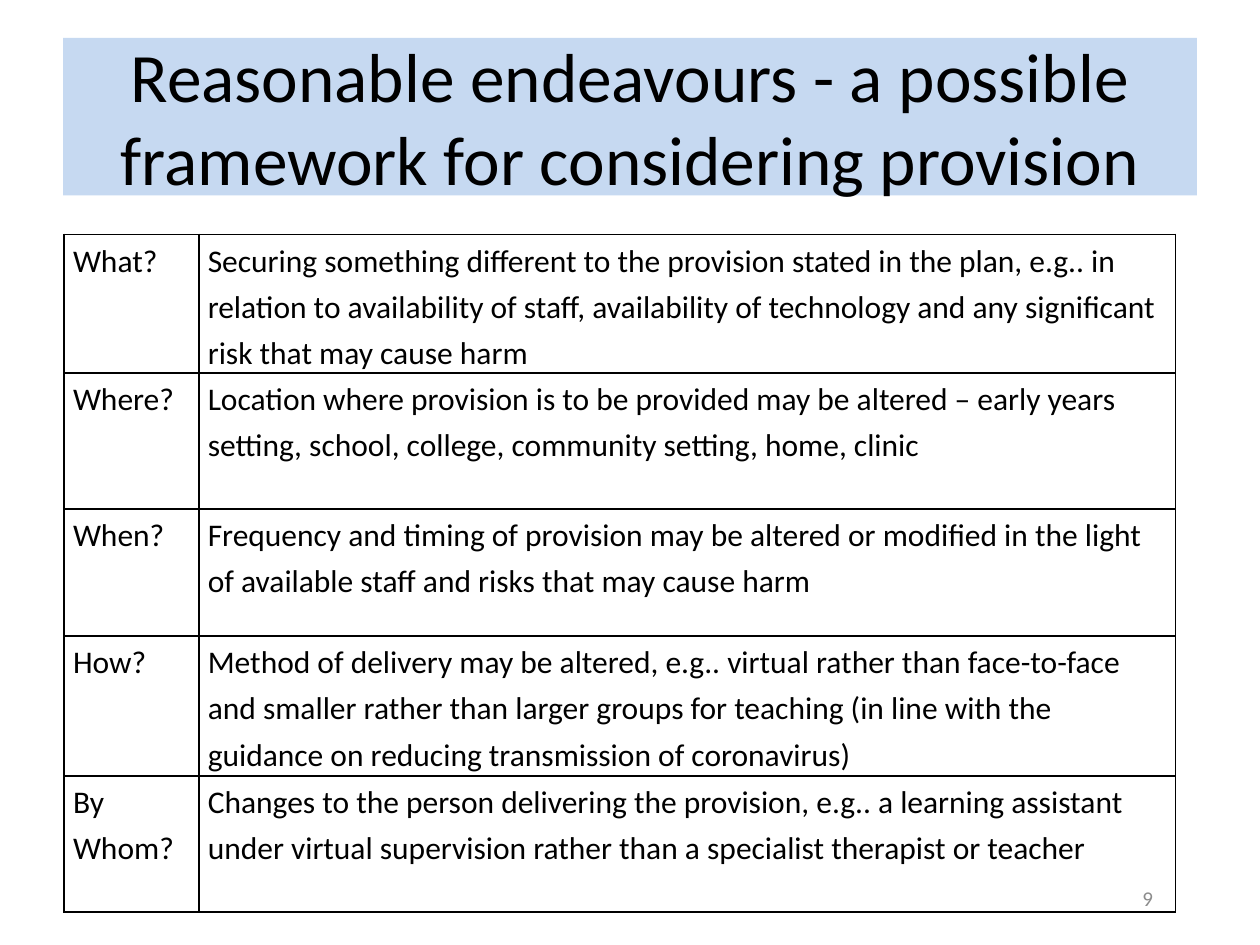
from lxml.etree import SubElement
from pptx import Presentation
from pptx.dml.color import RGBColor
from pptx.enum.text import MSO_ANCHOR as Anchor, MSO_AUTO_SIZE as AutoSize, PP_ALIGN as Align
from pptx.oxml.ns import qn
from pptx.util import Inches, Pt

COLOURS = {"text": "000000", "title": "C6D9F1", "cell": "FFFFFF", "border": "000000", "number": "8C8C8C"}
FONT = "Calibri"
TITLE = "Reasonable endeavours - a possible framework for considering provision"
COLUMN_WIDTHS = (1.07, 7.75)
FRAMEWORK = [
    (1.08, "What?", "Securing something different to the provision stated in the plan, e.g.. in relation to "
     "availability of staff, availability of technology and any significant risk that may cause harm"),
    (1.08, "Where?", "Location where provision is to be provided may be altered – early years setting, school, "
     "college, community setting, home, clinic"),
    (1.01, "When?", "Frequency and timing of provision may be altered or modified in the light of available "
     "staff and risks that may cause harm"),
    (1.11, "How?", "Method of delivery may be altered, e.g.. virtual rather than face-to-face and smaller rather "
     "than larger groups for teaching (in line with the guidance on reducing transmission of coronavirus)"),
    (1.08, "By Whom?", "Changes to the person delivering the provision, e.g.. a learning assistant under virtual "
     "supervision rather than a specialist therapist or teacher"),
]


def colour(name):
    """Return the named colour."""
    return RGBColor.from_string(COLOURS[name])


def paint(target, name):
    """Give a shape or cell a solid fill."""
    target.fill.solid()
    target.fill.fore_color.rgb = colour(name)


def write(frame, text, size=18, shade="text", align=Align.LEFT, spacing=None, after=None):
    """Write one formatted paragraph into a text frame."""
    para = frame.paragraphs[0]
    para.alignment, para.line_spacing = align, spacing
    para.space_after = None if after is None else Pt(after)
    span = para.add_run()
    span.text = text
    span.font.name, span.font.size = FONT, Pt(size)
    span.font.color.rgb = colour(shade)


def add_title(slide):
    """Place and format the title placeholder."""
    title = slide.shapes.title
    title.left, title.top, title.width, title.height = map(Inches, (0.5, 0.3, 9, 1.25))
    paint(title, "title")
    frame = title.text_frame
    frame.word_wrap, frame.auto_size = True, AutoSize.NONE
    frame.vertical_anchor = Anchor.MIDDLE
    write(frame, TITLE, size=39.6, align=Align.CENTER)


def outline(cell):
    """Draw a border on all four sides of a cell."""
    properties = cell._tc.get_or_add_tcPr()
    for side in ("lnL", "lnR", "lnT", "lnB"):
        line = SubElement(properties, qn(f"a:{side}"), w=str(Pt(1)))
        fill = SubElement(line, qn("a:solidFill"))
        SubElement(fill, qn("a:srgbClr"), val=COLOURS["border"])


def fill_cell(cell, text):
    """Format a cell and write its text."""
    outline(cell)
    paint(cell, "cell")
    cell.margin_left = cell.margin_right = Inches(0.07)
    cell.margin_top = cell.margin_bottom = 0
    write(cell.text_frame, text, spacing=1.2, after=12)


def add_framework(slide):
    """Add the table of questions and possible changes."""
    height = sum(row[0] for row in FRAMEWORK)
    table = slide.shapes.add_table(len(FRAMEWORK), len(COLUMN_WIDTHS), Inches(0.51), Inches(1.86),
                                   Inches(sum(COLUMN_WIDTHS)), Inches(height)).table
    table.first_row = table.horz_banding = False
    for column, width in zip(table.columns, COLUMN_WIDTHS):
        column.width = Inches(width)
    for row, (row_height, *texts) in zip(table.rows, FRAMEWORK):
        row.height = Inches(row_height)
        for cell, text in zip(row.cells, texts):
            fill_cell(cell, text)


def add_page_number(slide):
    """Add the page number at the lower right."""
    box = slide.shapes.add_textbox(*map(Inches, (8.69, 6.93, 0.56, 0.4)))
    box.text_frame.word_wrap = True
    box.text_frame.vertical_anchor = Anchor.MIDDLE
    write(box.text_frame, "9", size=12, shade="number", align=Align.RIGHT)


def main():
    """Build and save the deck."""
    deck = Presentation()
    deck.slide_width, deck.slide_height = Inches(10), Inches(7.5)
    slide = deck.slides.add_slide(deck.slide_layouts.get_by_name("Title Only"))
    add_title(slide)
    add_framework(slide)
    add_page_number(slide)
    deck.save("out.pptx")


if __name__ == "__main__":
    main()
